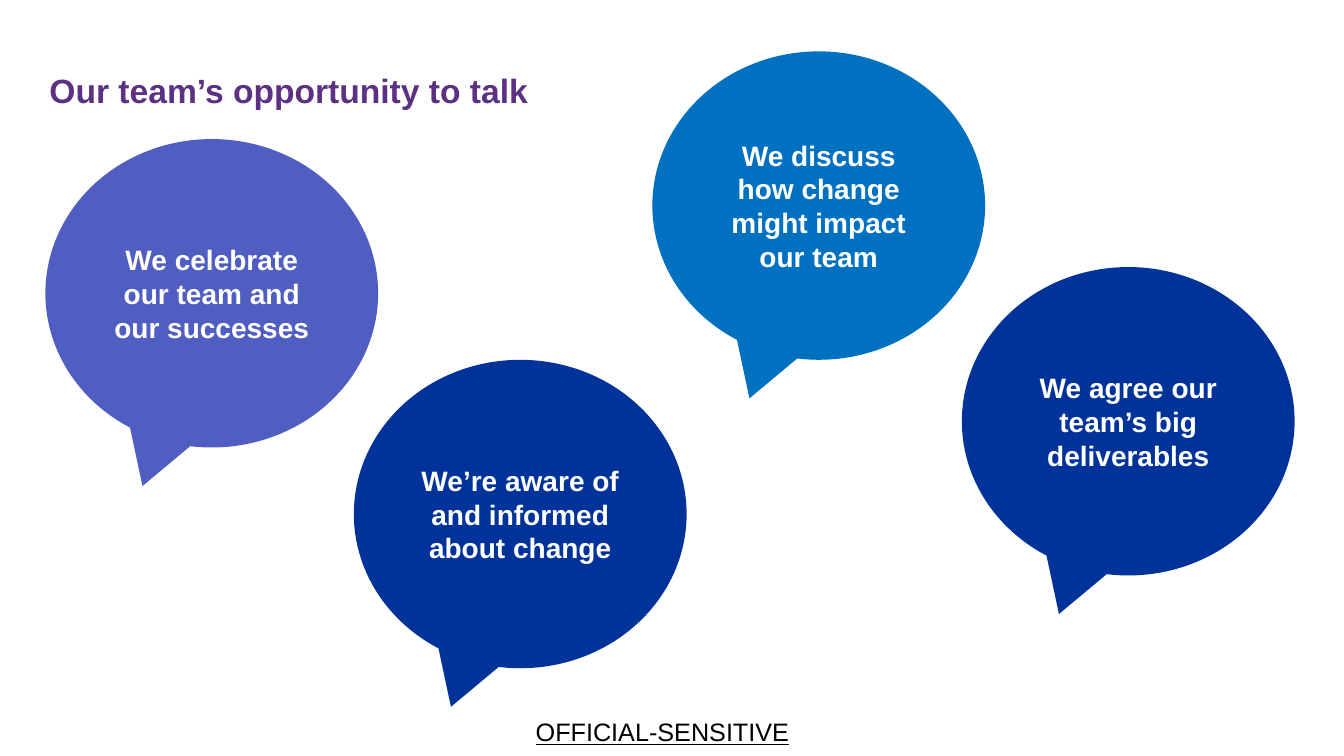
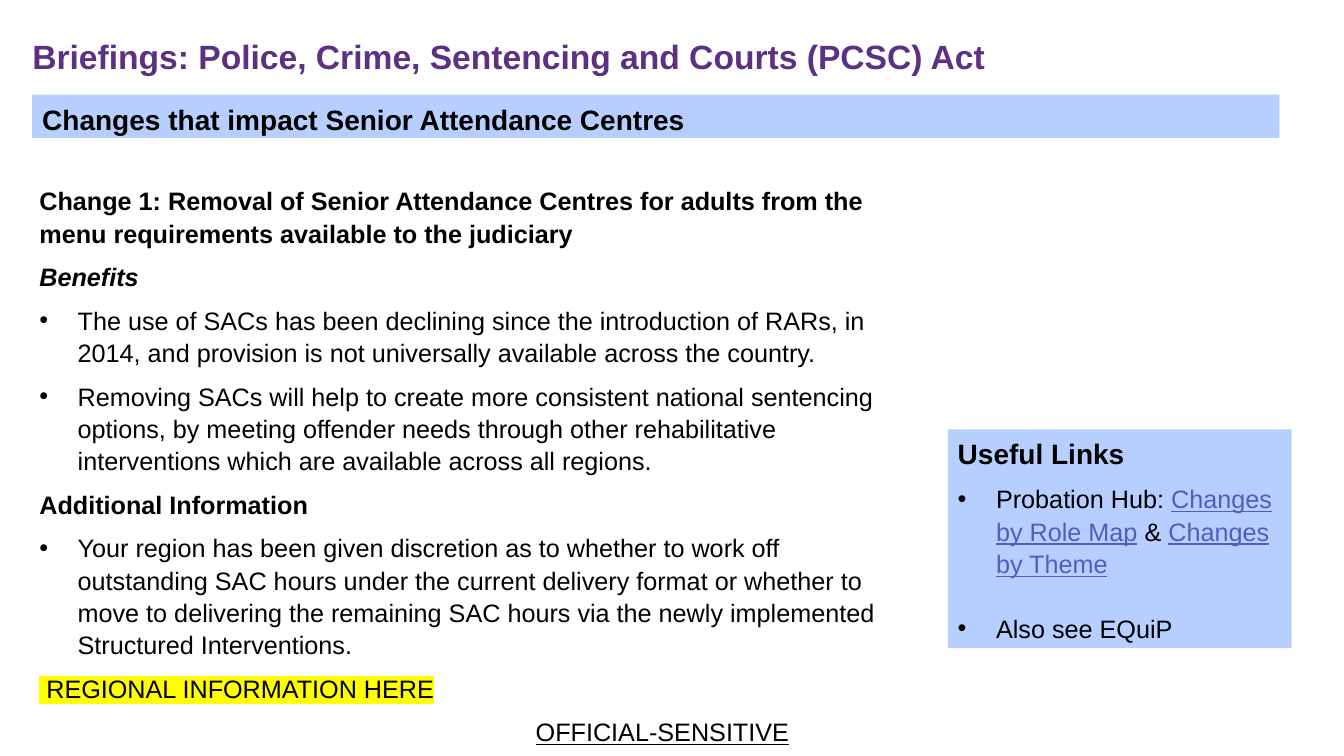
from dataclasses import dataclass
from typing import NamedTuple

from lxml import etree
from pptx import Presentation
from pptx.dml.color import RGBColor
from pptx.enum.shapes import MSO_SHAPE
from pptx.enum.text import MSO_ANCHOR, MSO_AUTO_SIZE, PP_ALIGN
from pptx.oxml.ns import qn
from pptx.util import Inches, Pt

LEFT, CENTER = PP_ALIGN.LEFT, PP_ALIGN.CENTER
TOP, MIDDLE = MSO_ANCHOR.TOP, MSO_ANCHOR.MIDDLE
RECTANGLE, CALLOUT = MSO_SHAPE.RECTANGLE, MSO_SHAPE.OVAL_CALLOUT
NO_AUTOFIT = MSO_AUTO_SIZE.NONE

FONT = "Arial"
COLORS = {
    "title": "5C3183",
    "text": "000000",
    "white": "FFFFFF",
    "violet": "505DC1",
    "blue": "0070C0",
    "navy": "003399",
    "panel": "B7CFFF",
    "highlight": "FFFF00",
}
SLIDE_WIDTH, SLIDE_HEIGHT = Inches(13.33), Inches(7.5)
BULLET_INDENT = Inches(0.38)
TITLE_ONLY, TITLE_AND_BODY = 5, 1


class Area(NamedTuple):
    """Left, top, width and height in percent of the slide."""
    left: float
    top: float
    width: float
    height: float

    def lengths(self) -> list[int]:
        sides = (SLIDE_WIDTH, SLIDE_HEIGHT) * 2
        return [round(side * share / 100) for side, share in zip(sides, self)]


class Span(NamedTuple):
    text: str
    link: bool = False


@dataclass
class Line:
    spans: list[Span]
    size: float = 18
    color: str = "text"
    bold: bool = False
    italic: bool = False
    underline: bool = False
    bullet: bool = False
    highlight: bool = False
    align: PP_ALIGN = LEFT
    spacing: float = 1.07
    after: float = 8


class Bubble(NamedTuple):
    left: float
    top: float
    color: str
    text: str


BUBBLE_WIDTH, BUBBLE_HEIGHT = 24.76, 40.8
BUBBLES = [
    Bubble(3.38, 18.4, "violet", "We celebrate our team and our successes"),
    Bubble(48.54, 6.8, "blue", "We discuss how change might impact our team"),
    Bubble(26.33, 47.6, "navy", "We’re aware of and informed about change"),
    Bubble(71.57, 35.33, "navy", "We agree our team’s big deliverables"),
]

FOOTER_AREA = Area(39.01, 94.13, 20.56, 5.33)
BAND_AREA = Area(2.4, 12.53, 92.8, 5.73)
BODY_AREA = Area(2.18, 23.6, 66.77, 76.4)
LINKS_AREA = Area(70.52, 56.8, 25.58, 28.93)

BODY_LINES = [
    Line([Span("Change 1: Removal of Senior Attendance Centres for adults from the "
               "menu requirements available to the judiciary")], bold=True),
    Line([Span("Benefits")], bold=True, italic=True),
    Line([Span("The use of SACs has been declining since the introduction of RARs, in "
               "2014, and provision is not universally available across the country.")],
         bullet=True),
    Line([Span("Removing SACs will help to create more consistent national sentencing "
               "options, by meeting offender needs through other rehabilitative "
               "interventions which are available across all regions.")], bullet=True),
    Line([Span("Additional Information")], bold=True),
    Line([Span("Your region has been given discretion as to whether to work off "
               "outstanding SAC hours under the current delivery format or whether to "
               "move to delivering the remaining SAC hours via the newly implemented "
               "Structured Interventions.")], bullet=True),
    Line([Span(" REGIONAL INFORMATION HERE")], highlight=True),
]
LINK_LINES = [
    Line([Span("Useful Links")], size=20, bold=True),
    Line([Span("Probation Hub: "), Span("Changes by Role Map", link=True),
          Span(" & "), Span("Changes by Theme", link=True)], bullet=True, after=23),
    Line([Span("Also see EQuiP")], bullet=True),
]


def rgb(name: str) -> RGBColor:
    return RGBColor.from_string(COLORS[name])


def set_bullet(para, bullet: bool) -> None:
    properties = para._p.get_or_add_pPr()
    indent = BULLET_INDENT if bullet else 0
    properties.set("marL", str(indent))
    properties.set("indent", str(-indent))
    if bullet:
        etree.SubElement(properties, qn("a:buFont"), typeface=FONT)
        etree.SubElement(properties, qn("a:buChar"), char="•")
    else:
        etree.SubElement(properties, qn("a:buNone"))


def add_highlight(run) -> None:
    mark = etree.SubElement(run._r.get_or_add_rPr(), qn("a:highlight"))
    etree.SubElement(mark, qn("a:srgbClr"), val=COLORS["highlight"])


def write_lines(box, lines: list[Line], anchor: MSO_ANCHOR = TOP, wrap: bool = True) -> None:
    frame = box.text_frame
    frame.word_wrap = wrap
    frame.auto_size = NO_AUTOFIT
    frame.vertical_anchor = anchor
    for index, line in enumerate(lines):
        para = frame.add_paragraph() if index else frame.paragraphs[0]
        set_bullet(para, line.bullet)
        para.alignment = line.align
        para.line_spacing = line.spacing
        para.space_before = Pt(0)
        para.space_after = Pt(line.after)
        font = para.font
        font.name, font.size = FONT, Pt(line.size)
        font.bold, font.italic, font.underline = line.bold, line.italic, line.underline
        font.color.rgb = rgb(line.color)
        for span in line.spans:
            run = para.add_run()
            run.text = span.text
            if span.link:
                run.font.underline = True
                run.font.color.rgb = rgb("violet")
            if line.highlight:
                add_highlight(run)


def move(box, area: Area) -> None:
    box.left, box.top, box.width, box.height = area.lengths()


def add_filled_shape(page, kind: MSO_SHAPE, area: Area, color: str):
    shape = page.shapes.add_shape(kind, *area.lengths())
    shape.shadow.inherit = False
    shape.fill.solid()
    shape.fill.fore_color.rgb = rgb(color)
    shape.line.fill.background()
    return shape


def add_page(deck, layout: int, title: str, left: float, top: float):
    """Add a slide with the shared title style and footer marking."""
    page = deck.slides.add_slide(deck.slide_layouts[layout])
    heading = page.shapes.title
    move(heading, Area(left, top, 92.8, 19.33))
    frame = heading.text_frame
    frame.margin_left = frame.margin_top = frame.margin_right = frame.margin_bottom = 0
    write_lines(heading, [Line([Span(title)], size=24, color="title", bold=True,
                               spacing=0.9, after=0)], MIDDLE)
    footer = page.shapes.add_textbox(*FOOTER_AREA.lengths())
    write_lines(footer, [Line([Span("OFFICIAL-SENSITIVE")], underline=True,
                              align=CENTER, spacing=1.0, after=0)], wrap=False)
    return page


def build_talk_page(deck) -> None:
    page = add_page(deck, TITLE_ONLY, "Our team’s opportunity to talk", 3.68, 2.53)
    for bubble in BUBBLES:
        area = Area(bubble.left, bubble.top, BUBBLE_WIDTH, BUBBLE_HEIGHT)
        shape = add_filled_shape(page, CALLOUT, area, bubble.color)
        write_lines(shape, [Line([Span(bubble.text)], size=20, color="white", bold=True,
                                 align=CENTER, spacing=1.0, after=0)], MIDDLE)


def build_briefing_page(deck) -> None:
    page = add_page(deck, TITLE_AND_BODY,
                    "Briefings: Police, Crime, Sentencing and Courts (PCSC) Act", 2.4, -1.87)
    body = page.placeholders[1]
    move(body, BODY_AREA)
    write_lines(body, BODY_LINES)
    links = add_filled_shape(page, RECTANGLE, LINKS_AREA, "panel")
    write_lines(links, LINK_LINES)
    band = add_filled_shape(page, RECTANGLE, BAND_AREA, "panel")
    write_lines(band, [Line([Span("Changes that impact Senior Attendance Centres")],
                            size=20, bold=True)])


def main() -> None:
    deck = Presentation()
    deck.slide_width, deck.slide_height = SLIDE_WIDTH, SLIDE_HEIGHT
    build_talk_page(deck)
    build_briefing_page(deck)
    deck.save("out.pptx")


if __name__ == "__main__":
    main()
